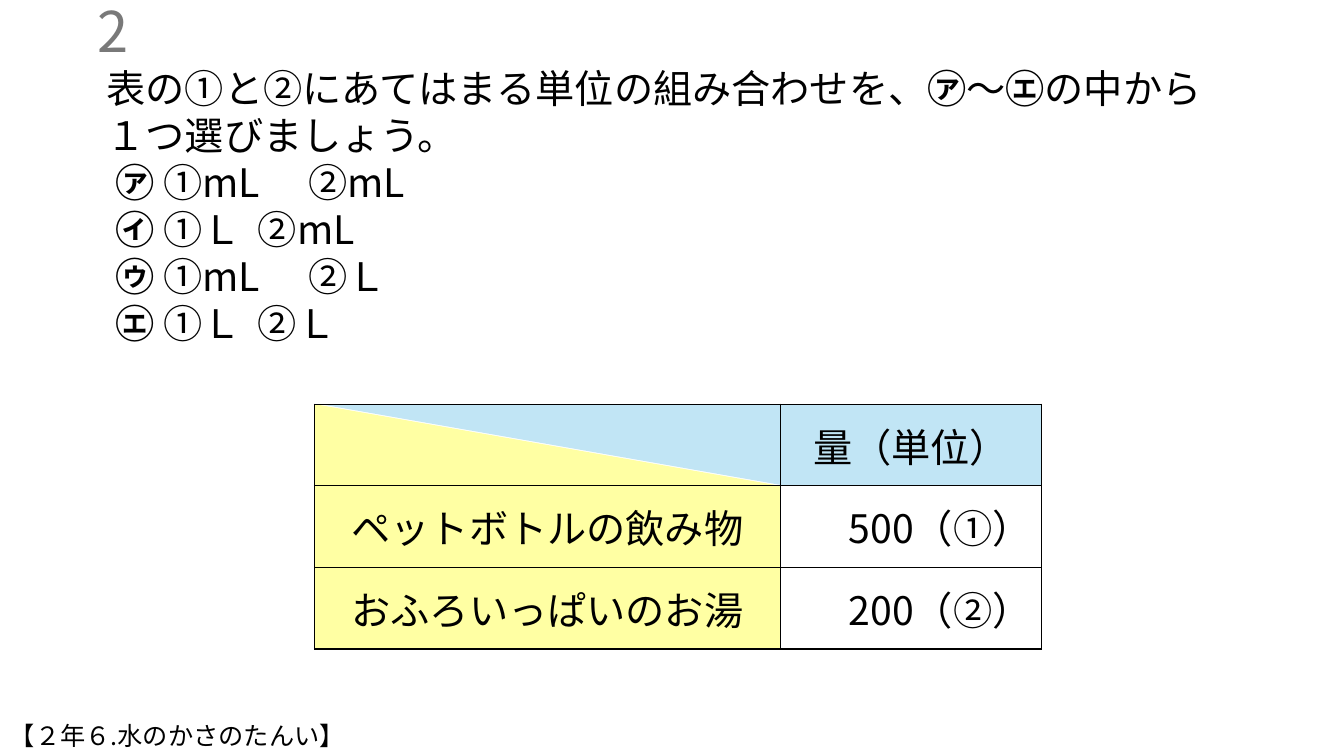
from pptx import Presentation
from pptx.dml.color import RGBColor
from pptx.enum.shapes import MSO_SHAPE as Shape
from pptx.enum.text import MSO_ANCHOR as Anchor, MSO_AUTO_SIZE as AutoSize, PP_ALIGN as Align
from pptx.oxml import parse_xml
from pptx.oxml.ns import nsdecls
from pptx.util import Inches, Pt

BLACK, GREY = "000000", "797979"
YELLOW, BLUE = "FFFFA3", "C1E5F5"


def color(value):
    return RGBColor.from_string(value)


def write(frame, paragraphs, font="Noto Sans CJK JP", size=28, ink=BLACK,
          align=Align.LEFT, anchor=Anchor.TOP):
    """Fill a text frame; each paragraph is a list of (text, bold) pairs."""
    frame.word_wrap = True
    frame.vertical_anchor = anchor
    for index, spans in enumerate(paragraphs):
        para = frame.add_paragraph() if index else frame.paragraphs[0]
        para.alignment = align
        for text, bold in spans:
            span = para.add_run()
            span.text = text
            span.font.name = font
            span.font.size = Pt(size)
            span.font.bold = bold
            span.font.color.rgb = color(ink)
            span.font._element.append(
                parse_xml(f'<a:ea {nsdecls("a")} typeface="{font}"/>'))


class Worksheet:
    """Holds the deck and the current page."""

    def __init__(self):
        self.deck = Presentation()
        self.deck.slide_width = Inches(13.33)
        self.deck.slide_height = Inches(7.5)
        self.page = self.deck.slides.add_slide(self.deck.slide_layouts[5])

    def title(self, text, left, top, width, height, **style):
        box = self.page.shapes.title
        box.left, box.top = Inches(left), Inches(top)
        box.width, box.height = Inches(width), Inches(height)
        box.text_frame.auto_size = AutoSize.NONE
        write(box.text_frame, [[(text, False)]], **style)

    def text(self, paragraphs, left, top, width, height, **style):
        box = self.page.shapes.add_textbox(
            Inches(left), Inches(top), Inches(width), Inches(height))
        write(box.text_frame, paragraphs, **style)
        box.text_frame.auto_size = AutoSize.SHAPE_TO_FIT_TEXT

    def split_cell(self, left, top, width, height, shift):
        """Draw the two triangles that divide the corner cell."""
        group = self.page.shapes.add_group_shape()
        for offset, turn, fill in ((0, 0, YELLOW), (shift, 180, BLUE)):
            half = group.shapes.add_shape(
                Shape.RIGHT_TRIANGLE, Inches(left + offset), Inches(top),
                Inches(width), Inches(height))
            half.rotation = turn
            half.shadow.inherit = False
            half.fill.solid()
            half.fill.fore_color.rgb = color(fill)
            half.line.fill.background()

    def table(self, rows, left, top, widths, row_height):
        """Draw a table; each cell is (text, fill or None, alignment)."""
        table = self.page.shapes.add_table(
            len(rows), len(widths), Inches(left), Inches(top),
            Inches(sum(widths)), Inches(row_height * len(rows))).table
        for column, width in zip(table.columns, widths):
            column.width = Inches(width)
        for row_index, row in enumerate(rows):
            table.rows[row_index].height = Inches(row_height)
            for column_index, (text, fill, align) in enumerate(row):
                cell = table.cell(row_index, column_index)
                cell.vertical_anchor = Anchor.MIDDLE
                if text:
                    write(cell.text_frame, [[(text, False)]], align=align,
                          anchor=Anchor.MIDDLE)
                self.border(cell)
                if fill:
                    cell.fill.solid()
                    cell.fill.fore_color.rgb = color(fill)
                else:
                    cell.fill.background()

    def border(self, cell, ink=BLACK, weight=1):
        properties = cell._tc.get_or_add_tcPr()
        for side in ("lnL", "lnR", "lnT", "lnB"):
            properties.append(parse_xml(
                f'<a:{side} {nsdecls("a")} w="{Pt(weight)}"><a:solidFill>'
                f'<a:srgbClr val="{ink}"/></a:solidFill></a:{side}>'))


def main():
    sheet = Worksheet()
    sheet.split_cell(3.12, 4.01, 4.56, 0.8, shift=0.06)

    question = [("表の①と②にあてはまる単位の組み合わせを、", False), ("㋐", True),
                ("～", False), ("㋓", True), ("の中から１つ選びましょう。", False)]
    choices = [("㋐", "mL", "mL"), ("㋑", "Ｌ", "mL"),
               ("㋒", "mL", "Ｌ"), ("㋓", "Ｌ", "Ｌ")]
    answers = [[(f" {mark} ", True), (f"①{first}\t②{second}", False)]
               for mark, first, second in choices]
    sheet.text([question] + answers, 0.96, 0.59, 11.13, 2.93)

    sheet.title("2", -1.63, 0.1, 3, 0.4, size=40, ink=GREY,
                align=Align.RIGHT, anchor=Anchor.MIDDLE)

    sheet.table([
        [("", None, Align.CENTER), ("量（単位）", BLUE, Align.CENTER)],
        [("ペットボトルの飲み物", YELLOW, Align.CENTER), ("500（①）", None, Align.RIGHT)],
        [("おふろいっぱいのお湯", YELLOW, Align.CENTER), ("200（②）", None, Align.RIGHT)],
    ], 3.12, 4.01, widths=(4.62, 2.59), row_height=0.81)

    sheet.text([[("【２年６.水のかさのたんい】", False)]], 0, 7.1, 7.49, 0.4, size=18)
    sheet.deck.save("out.pptx")


if __name__ == "__main__":
    main()
